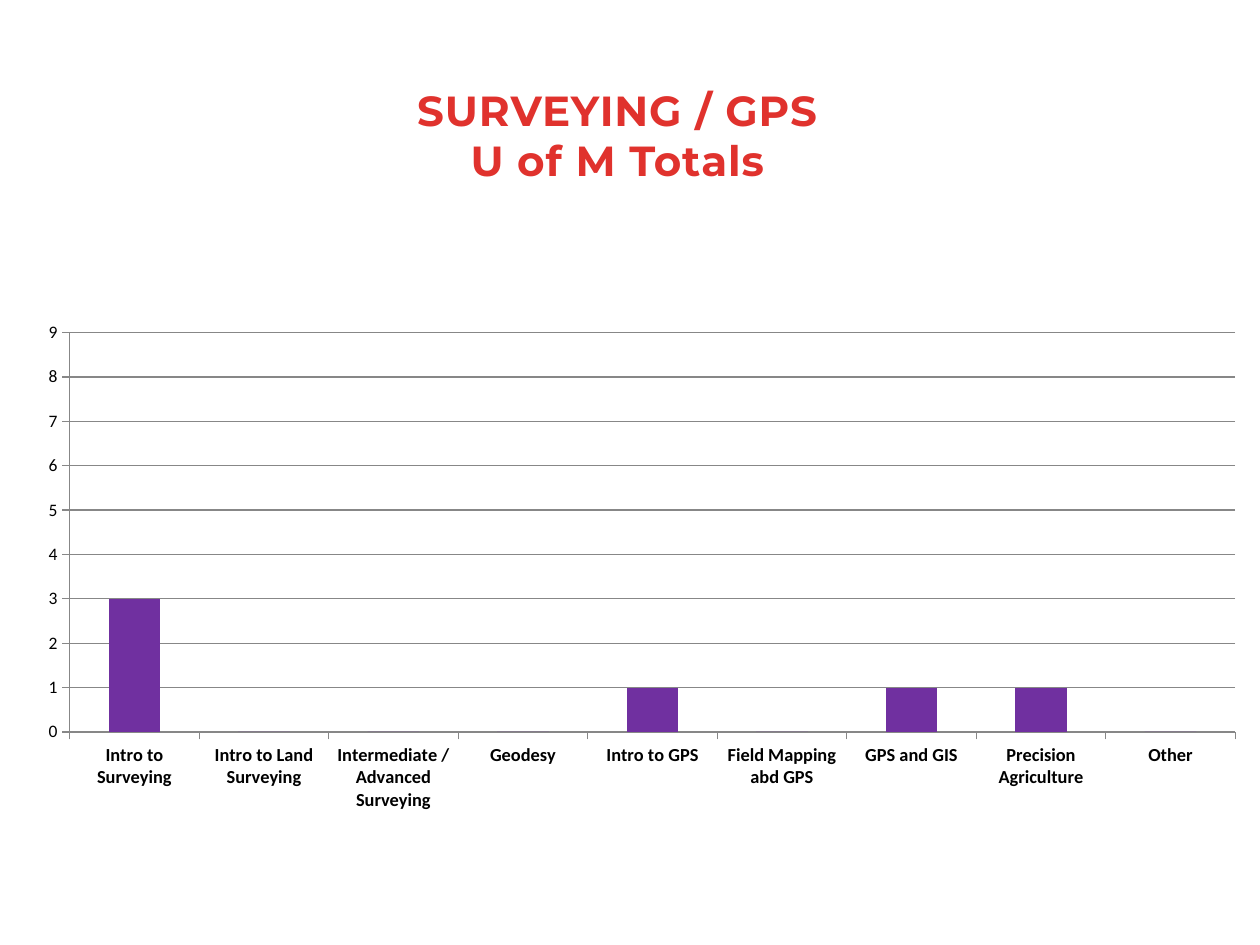
from dataclasses import dataclass

from pptx import Presentation
from pptx.chart.data import CategoryChartData
from pptx.dml.color import RGBColor
from pptx.enum.chart import XL_CHART_TYPE, XL_TICK_MARK
from pptx.enum.text import MSO_AUTO_SIZE, PP_ALIGN
from pptx.util import Inches, Pt

WIDE, HIGH = Inches(10), Inches(7.5)
RED, PURPLE, GREY, BLACK = "E0322D", "7030A0", "878787", "000000"
TITLE = ("SURVEYING / GPS", "U of M Totals")
COUNTS = {
    "Intro to Surveying": 3,
    "Intro to Land Surveying": 0,
    "Intermediate / Advanced Surveying": 0,
    "Geodesy": 0,
    "Intro to GPS": 1,
    "Field Mapping abd GPS": 0,
    "GPS and GIS": 1,
    "Precision Agriculture": 1,
    "Other": 0,
}


@dataclass(frozen=True)
class Box:
    """A place given in percent of the slide's width and height."""
    left: float
    top: float
    width: float
    height: float

    def place(self) -> tuple[int, int, int, int]:
        """Return the box in slide units."""
        return (int(WIDE * self.left / 100), int(HIGH * self.top / 100),
                int(WIDE * self.width / 100), int(HIGH * self.height / 100))


def paint(code: str) -> RGBColor:
    """Turn a hex string into a colour."""
    return RGBColor.from_string(code)


def style(font, name: str, size: float, code: str, bold: bool) -> None:
    """Set the look of a font."""
    font.name, font.size, font.bold = name, Pt(size), bold
    font.color.rgb = paint(code)


def rule(line) -> None:
    """Draw a chart line thin and grey."""
    line.color.rgb = paint(GREY)
    line.width = Pt(0.75)


def add_title(slide, box: Box, lines: tuple[str, ...]) -> None:
    """Add the centred heading, one paragraph a line."""
    frame = slide.shapes.add_textbox(*box.place()).text_frame
    frame.word_wrap = True
    frame.auto_size = MSO_AUTO_SIZE.SHAPE_TO_FIT_TEXT
    frame.text = "\n".join(lines)
    for para in frame.paragraphs:
        para.alignment = PP_ALIGN.CENTER
        for run in para.runs:
            style(run.font, "Montserrat", 24, RED, True)
            run.font._element.set("spc", "50")


def add_bars(slide, box: Box, counts: dict[str, int]) -> None:
    """Add the column chart of course counts."""
    data = CategoryChartData()
    data.categories = list(counts)
    data.add_series("Series 1", list(counts.values()))
    chart = slide.shapes.add_chart(
        XL_CHART_TYPE.COLUMN_CLUSTERED, *box.place(), data).chart
    chart.has_legend = chart.has_title = False
    style(chart.font, "Calibri", 10, BLACK, False)

    plot = chart.plots[0]
    plot.gap_width = 150
    plot.vary_by_categories = False
    fill = plot.series[0].format.fill
    fill.solid()
    fill.fore_color.rgb = paint(PURPLE)

    names, scale = chart.category_axis, chart.value_axis
    for axis in (names, scale):
        axis.major_tick_mark = XL_TICK_MARK.OUTSIDE
        axis.minor_tick_mark = XL_TICK_MARK.NONE
        rule(axis.format.line)
    style(names.tick_labels.font, "Calibri", 10.5, BLACK, True)
    scale.minimum_scale, scale.maximum_scale, scale.major_unit = 0, 9, 1
    scale.has_major_gridlines = True
    rule(scale.major_gridlines.format.line)


def main() -> None:
    """Build the slide and save it."""
    deck = Presentation()
    deck.slide_width, deck.slide_height = WIDE, HIGH
    slide = deck.slides.add_slide(deck.slide_layouts[6])
    add_bars(slide, Box(1.9, 33.07, 98.1, 53.87), COUNTS)
    add_title(slide, Box(20.5, 8.27, 57, 12.13), TITLE)
    deck.save("out.pptx")


if __name__ == "__main__":
    main()
